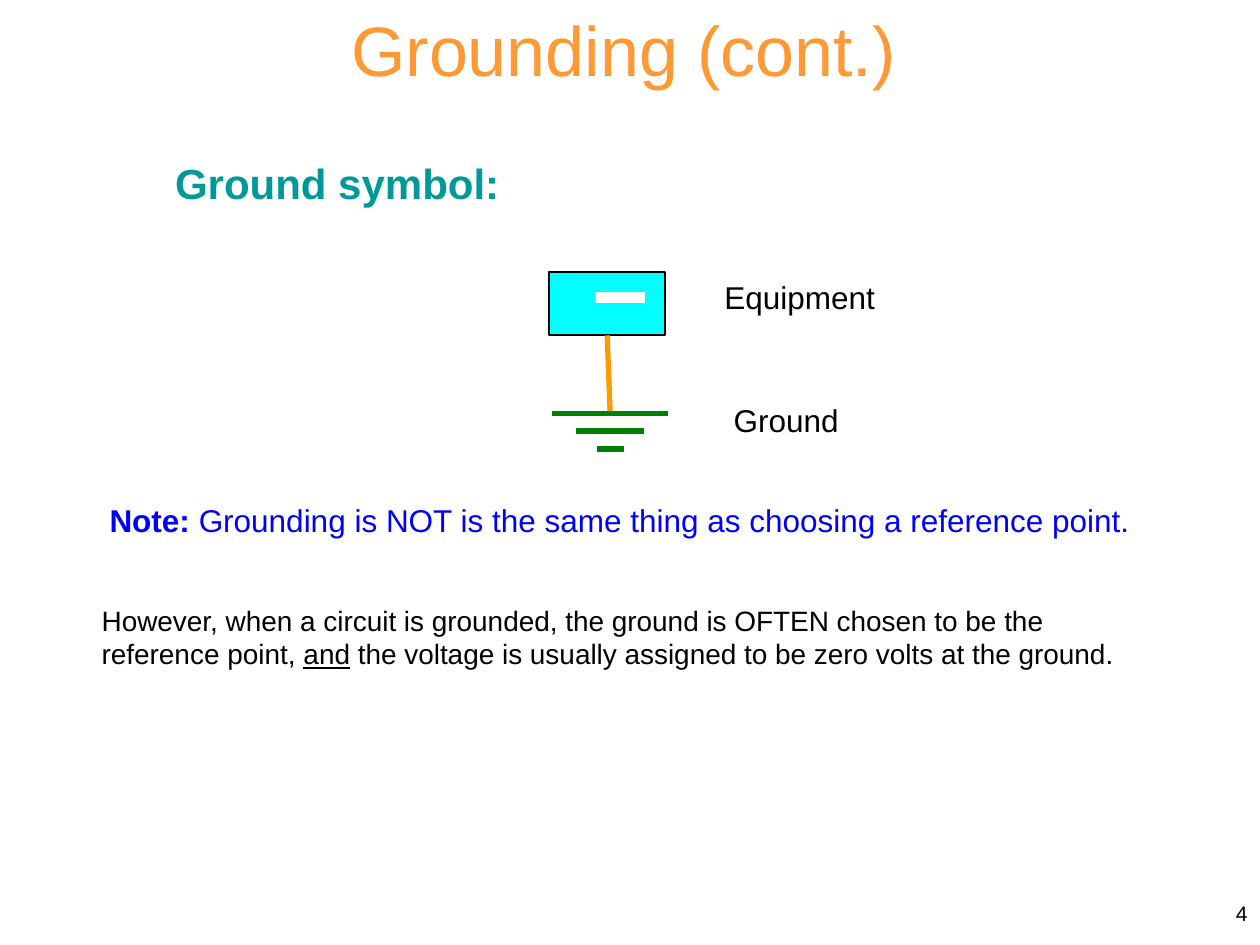
from dataclasses import dataclass

from lxml import etree
from pptx import Presentation
from pptx.dml.color import RGBColor
from pptx.enum.shapes import MSO_CONNECTOR, MSO_SHAPE
from pptx.enum.text import MSO_ANCHOR, MSO_AUTO_SIZE, PP_ALIGN
from pptx.oxml.ns import qn
from pptx.util import Cm, Pt

STRAIGHT = MSO_CONNECTOR.STRAIGHT
RECTANGLE = MSO_SHAPE.RECTANGLE
TOP, MIDDLE = MSO_ANCHOR.TOP, MSO_ANCHOR.MIDDLE
FIT, NO_FIT = MSO_AUTO_SIZE.SHAPE_TO_FIT_TEXT, MSO_AUTO_SIZE.NONE
LEFT, CENTER, RIGHT = PP_ALIGN.LEFT, PP_ALIGN.CENTER, PP_ALIGN.RIGHT


@dataclass(frozen=True)
class Theme:
    font: str = "Arial"
    title: RGBColor = RGBColor(0xFF, 0x99, 0x33)
    heading: RGBColor = RGBColor(0x00, 0x99, 0x99)
    note: RGBColor = RGBColor(0x00, 0x00, 0xFF)
    black: RGBColor = RGBColor(0x00, 0x00, 0x00)
    white: RGBColor = RGBColor(0xFF, 0xFF, 0xFF)
    equipment: RGBColor = RGBColor(0x00, 0xFF, 0xFF)
    wire: RGBColor = RGBColor(0xFF, 0x99, 0x00)
    ground: RGBColor = RGBColor(0x00, 0x80, 0x00)
    title_size: int = 40
    heading_size: int = 24
    label_size: int = 18
    body_size: int = 16
    number_size: int = 12


THEME = Theme()

prs = Presentation()
prs.slide_width, prs.slide_height = Cm(25.4), Cm(19.05)
s = prs.slides.add_slide(prs.slide_layouts[5])


def set_text(sp, box, runs, size, color, align=LEFT, wrap=False, anchor=TOP, fit=FIT):
    """Place a text shape and fill it with one paragraph; return its runs."""
    sp.left, sp.top, sp.width, sp.height = map(Cm, box)
    tf = sp.text_frame
    tf.word_wrap, tf.auto_size, tf.vertical_anchor = wrap, fit, anchor
    p = tf.paragraphs[0]
    p.alignment = align
    p.font.name, p.font.size, p.font.color.rgb = THEME.font, Pt(size), color
    for text in runs:
        p.add_run().text = text
    return p.runs


def add_line(x1, y1, x2, y2, color):
    """Draw a straight 3 pt line without a shadow."""
    line = s.shapes.add_connector(STRAIGHT, Cm(x1), Cm(y1), Cm(x2), Cm(y2))
    line.line.color.rgb, line.line.width = color, Pt(3)
    etree.SubElement(line._element.spPr, qn("a:effectLst"))
    return line


# Title
set_text(s.shapes.title, (6.83, 0, 11.51, 1.96), ["Grounding (cont.)"],
         THEME.title_size, THEME.title)

# Equipment box
equipment = s.shapes.add_shape(RECTANGLE, Cm(11.07), Cm(5.49), Cm(2.34), Cm(1.27))
equipment.shadow.inherit = False
equipment.fill.solid()
equipment.fill.fore_color.rgb = THEME.equipment
equipment.line.color.rgb, equipment.line.width = THEME.black, Pt(1)

# White arc in the box, traced along three Bezier curves
start = (11.73, 6.48)
curves = [
    ((11.79, 6.43), (11.84, 6.4), (11.94, 6.35)),
    ((12.04, 6.32), (12.19, 6.27), (12.29, 6.25)),
    ((12.4, 6.25), (12.45, 6.25), (12.55, 6.3)),
    ((12.65, 6.32), (12.83, 6.4), (12.9, 6.43)),
]
STEPS = 6
arc_points = []
p0 = start
for p1, p2, p3 in curves:
    for step in range(1, STEPS + 1):
        t = step / STEPS
        weights = ((1 - t) ** 3, 3 * t * (1 - t) ** 2, 3 * t ** 2 * (1 - t), t ** 3)
        arc_points.append(tuple(sum(w * c for w, c in zip(weights, axis))
                                for axis in zip(p0, p1, p2, p3)))
    p0 = p3
builder = s.shapes.build_freeform(*start, scale=Cm(1))
builder.add_line_segments(arc_points, close=False)
arc = builder.convert_to_shape()
arc.shadow.inherit = False
arc.fill.background()
arc.line.color.rgb, arc.line.width = THEME.white, Pt(6)

# Wire from the box down to the ground symbol
GROUND_X, GROUND_Y, BAR_GAP = 12.3, 8.33, 0.36
wire = add_line(GROUND_X, 6.76, GROUND_X, GROUND_Y, THEME.wire)
wire.begin_connect(equipment, 2)

# Ground symbol: three shrinking bars
for i, half in enumerate((1.17, 0.69, 0.27)):
    y = GROUND_Y + i * BAR_GAP
    add_line(GROUND_X - half, y, GROUND_X + half, y, THEME.ground)

# Labels beside the drawing
for text, box in (("Equipment", (14.33, 5.49, 3.58, 1.02)),
                  ("Ground", (14.53, 7.95, 2.64, 1.02))):
    set_text(s.shapes.add_textbox(0, 0, 0, 0), box, [text],
             THEME.label_size, THEME.black, CENTER)

# Heading
heading = set_text(s.shapes.add_textbox(0, 0, 0, 0), (3.28, 3.05, 7.11, 1.27),
                   ["Ground symbol:"], THEME.heading_size, THEME.heading)
heading[0].font.bold = True

# Note
note = set_text(s.shapes.add_textbox(0, 0, 0, 0), (0.3, 9.98, 24.56, 1.02),
                ["Note:", " Grounding is NOT is the same thing as choosing a reference point. "],
                THEME.label_size, THEME.note, CENTER, wrap=True)
note[0].font.bold = True

# Slide number
set_text(s.shapes.add_textbox(0, 0, 0, 0), (20.12, 17.78, 5.28, 1.27), ["4"],
         THEME.number_size, THEME.black, RIGHT, wrap=True, anchor=MIDDLE, fit=NO_FIT)

# Closing remark
remark = set_text(s.shapes.add_textbox(0, 0, 0, 0), (1.8, 12.04, 21.54, 1.63),
                  ["However, when a circuit is grounded, the ground is OFTEN chosen to be the "
                   "reference point, ", "and",
                   " the voltage is usually assigned to be zero volts at the ground."],
                  THEME.body_size, THEME.black, wrap=True)
remark[1].font.underline = True

prs.save("out.pptx")
